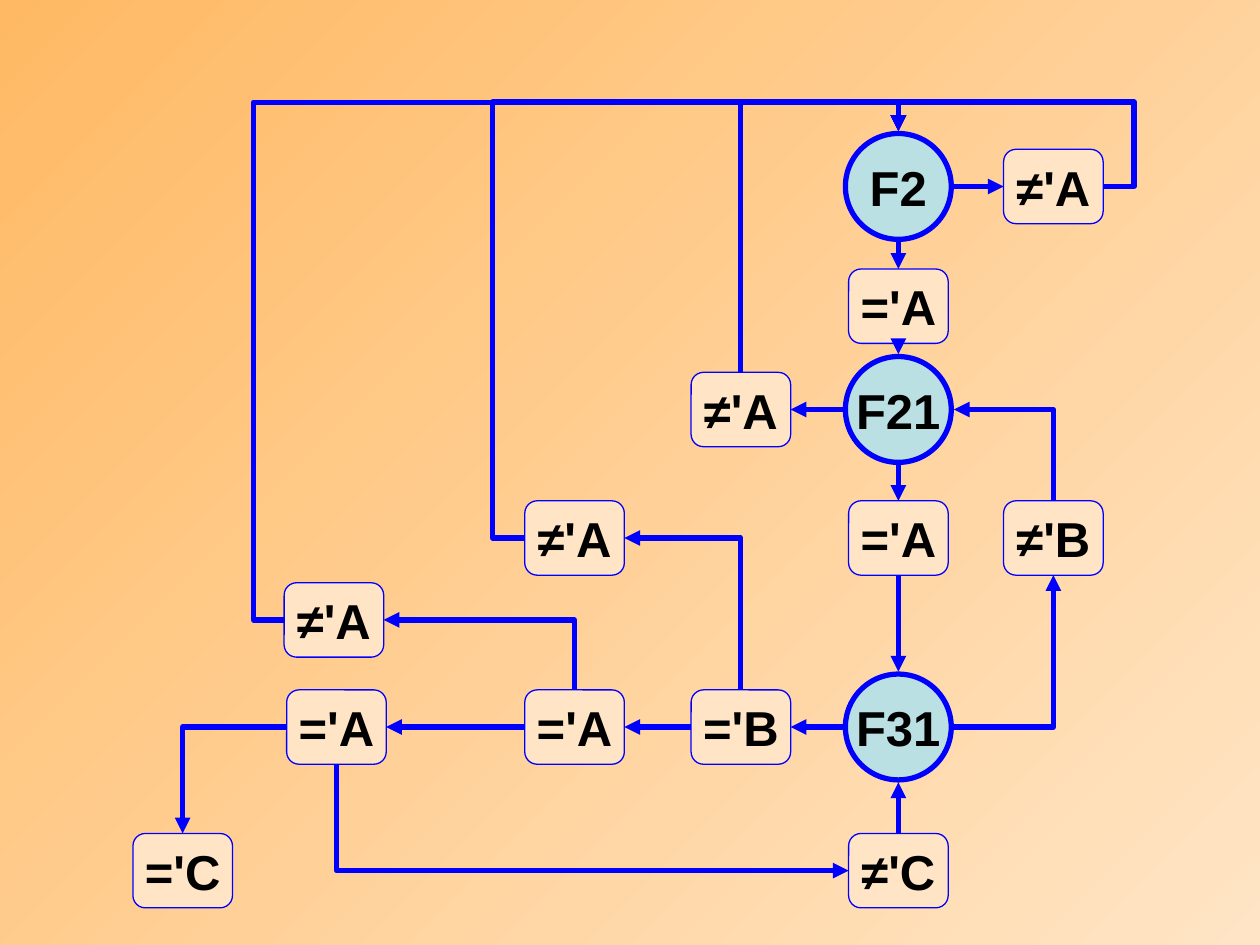
from lxml import etree
from pptx import Presentation
from pptx.dml.color import RGBColor
from pptx.enum.shapes import MSO_CONNECTOR, MSO_SHAPE
from pptx.enum.text import MSO_ANCHOR, PP_ALIGN
from pptx.oxml.ns import qn
from pptx.util import Inches, Pt

BLUE, TEAL, CREAM, ORANGE, BLACK = "0000FF", "BBE0E3", "FFE5C5", "FFB964", "000000"
BUS_Y = 0.81  # height of the shared return line
STATE_SIZE = (0.84, 0.84)
TEST_SIZE = (0.79, 0.59)
DIRECTIONS = {"top": (0, -1), "left": (-1, 0), "bottom": (0, 1), "right": (1, 0)}

# name: (text, centre x, centre y)
STATES = {
    "F2": ("F2", 7.13, 1.48),
    "F21": ("F21", 7.13, 3.25),
    "F31": ("F31", 7.13, 5.77),
}
TESTS = {
    "F2 hit": ("='A", 7.13, 2.43),
    "F2 miss": ("≠'A", 8.36, 1.48),
    "F21 hit": ("='A", 7.13, 4.27),
    "F21 miss": ("≠'A", 5.88, 3.25),
    "B hit": ("='B", 5.88, 5.77),
    "B miss": ("≠'B", 8.36, 4.27),
    "second A hit": ("='A", 4.56, 5.77),
    "second A miss": ("≠'A", 4.56, 4.27),
    "third A hit": ("='A", 2.67, 5.77),
    "third A miss": ("≠'A", 2.65, 4.92),
    "C hit": ("='C", 1.45, 6.91),
    "C miss": ("≠'C", 7.13, 6.91),
}

# (start, side, end, side)
STRAIGHT = [
    ("F2", "bottom", "F2 hit", "top"),
    ("F2", "right", "F2 miss", "left"),
    ("F2 hit", "bottom", "F21", "top"),
    ("F21", "left", "F21 miss", "right"),
    ("F21", "bottom", "F21 hit", "top"),
    ("F21 hit", "bottom", "F31", "top"),
    ("F31", "left", "B hit", "right"),
    ("B hit", "left", "second A hit", "right"),
    ("second A hit", "left", "third A hit", "right"),
    ("C miss", "top", "F31", "bottom"),
]
CORNERS = [
    ("third A hit", "bottom", "C miss", "left"),
    ("third A hit", "left", "C hit", "top"),
    ("second A hit", "top", "third A miss", "right"),
    ("B hit", "top", "second A miss", "right"),
    ("F31", "right", "B miss", "bottom"),
    ("B miss", "top", "F21", "right"),
]
# (start, side, x of the riser up to the return line)
RETURNS = [
    ("F2 miss", "right", 9.0),
    ("F21 miss", "top", None),
    ("second A miss", "left", 3.91),
    ("third A miss", "left", 2.01),
]


def color(value):
    return RGBColor.from_string(value)


def paint_background(page):
    fill = page.background.fill
    fill.gradient()
    fill.gradient_angle = 315
    for stop, value in zip(fill.gradient_stops, (ORANGE, CREAM)):
        stop.color.rgb = color(value)


def add_node(page, kind, size, node, fill, line_width):
    text, x, y = node
    width, height = size
    shape = page.shapes.add_shape(kind, Inches(x - width / 2), Inches(y - height / 2),
                                  Inches(width), Inches(height))
    shape.shadow.inherit = False
    shape.fill.solid()
    shape.fill.fore_color.rgb = color(fill)
    shape.line.color.rgb = color(BLUE)
    shape.line.width = Pt(line_width)
    frame = shape.text_frame
    frame.word_wrap = False
    frame.vertical_anchor = MSO_ANCHOR.MIDDLE
    frame.text = text
    para = frame.paragraphs[0]
    para.alignment = PP_ALIGN.CENTER
    font = para.runs[0].font
    font.name, font.size, font.bold = "Arial", Pt(28), True
    font.color.rgb = color(BLACK)
    return shape


def attach_point(name, side):
    """Point where a connector meets the given side of a node."""
    if name in STATES:
        _, x, y = STATES[name]
        width, height = (length + 0.04 for length in STATE_SIZE)
    else:
        _, x, y = TESTS[name]
        width, height = TEST_SIZE
    step_x, step_y = DIRECTIONS[side]
    return x + step_x * width / 2, y + step_y * height / 2


def add_link(page, shapes, link, preset="line", adjust=()):
    """Arrow between two nodes; adjust holds the bend positions as fractions."""
    start, start_side, end, end_side = link
    (x1, y1), (x2, y2) = attach_point(start, start_side), attach_point(end, end_side)
    kind = MSO_CONNECTOR.STRAIGHT if preset == "line" else MSO_CONNECTOR.ELBOW
    connector = page.shapes.add_connector(kind, Inches(x1), Inches(y1), Inches(x2), Inches(y2))
    connector.line.color.rgb = color(BLUE)
    connector.line.width = Pt(3)
    properties = connector._element.spPr
    etree.SubElement(properties, qn("a:effectLst"))
    etree.SubElement(connector.line._get_or_add_ln(), qn("a:tailEnd"), type="triangle")

    # Glue both ends to the nodes; an ellipse has twice as many sites
    glue = connector._element.find(".//" + qn("p:cNvCxnSpPr"))
    for tag, name, side in (("a:stCxn", start, start_side), ("a:endCxn", end, end_side)):
        site = list(DIRECTIONS).index(side) * (2 if name in STATES else 1)
        etree.SubElement(glue, qn(tag), id=str(shapes[name].shape_id), idx=str(site))

    if preset == "line":
        return
    geometry = properties.find(qn("a:prstGeom"))
    geometry.set("prst", preset)
    guides = geometry.find(qn("a:avLst"))
    for number, fraction in enumerate(adjust, 1):
        etree.SubElement(guides, qn("a:gd"), name=f"adj{number}",
                         fmla=f"val {round(fraction * 100000)}")

    # An elbow that leaves vertically is a turned horizontal one
    if start_side in ("top", "bottom"):
        width, height = abs(y2 - y1), abs(x2 - x1)
        connector.left = Inches((x1 + x2 - width) / 2)
        connector.top = Inches((y1 + y2 - height) / 2)
        connector.width, connector.height = Inches(width), Inches(height)
        rightward, downward = x2 > x1, y2 > y1
        frame = properties.find(qn("a:xfrm"))
        frame.set("rot", str((270 if rightward else 90) * 60000))
        frame.set("flipH", "1" if rightward == downward else "0")
        frame.set("flipV", "0")


def add_return(page, shapes, start, side, riser_x):
    """Arrow that climbs to the shared line and drops into the first state."""
    (x1, y1), (x2, y2) = attach_point(start, side), attach_point("F2", "top")
    rise = (BUS_Y - y1) / (y2 - y1)
    link = (start, side, "F2", "top")
    if riser_x is None:
        add_link(page, shapes, link, "bentConnector3", [rise])
    else:
        add_link(page, shapes, link, "bentConnector4", [(riser_x - x1) / (x2 - x1), rise])


def main():
    deck = Presentation()
    deck.slide_width, deck.slide_height = Inches(10), Inches(7.5)
    page = deck.slides.add_slide(deck.slide_layouts[6])
    paint_background(page)

    # States and tests
    shapes = {}
    for name, node in STATES.items():
        shapes[name] = add_node(page, MSO_SHAPE.OVAL, STATE_SIZE, node, TEAL, 3)
    for name, node in TESTS.items():
        shapes[name] = add_node(page, MSO_SHAPE.ROUNDED_RECTANGLE, TEST_SIZE, node, CREAM, 0.75)

    # Arrows
    for link in STRAIGHT:
        add_link(page, shapes, link)
    for link in CORNERS:
        add_link(page, shapes, link, "bentConnector2")
    for start, side, riser_x in RETURNS:
        add_return(page, shapes, start, side, riser_x)

    deck.save("out.pptx")


if __name__ == "__main__":
    main()
